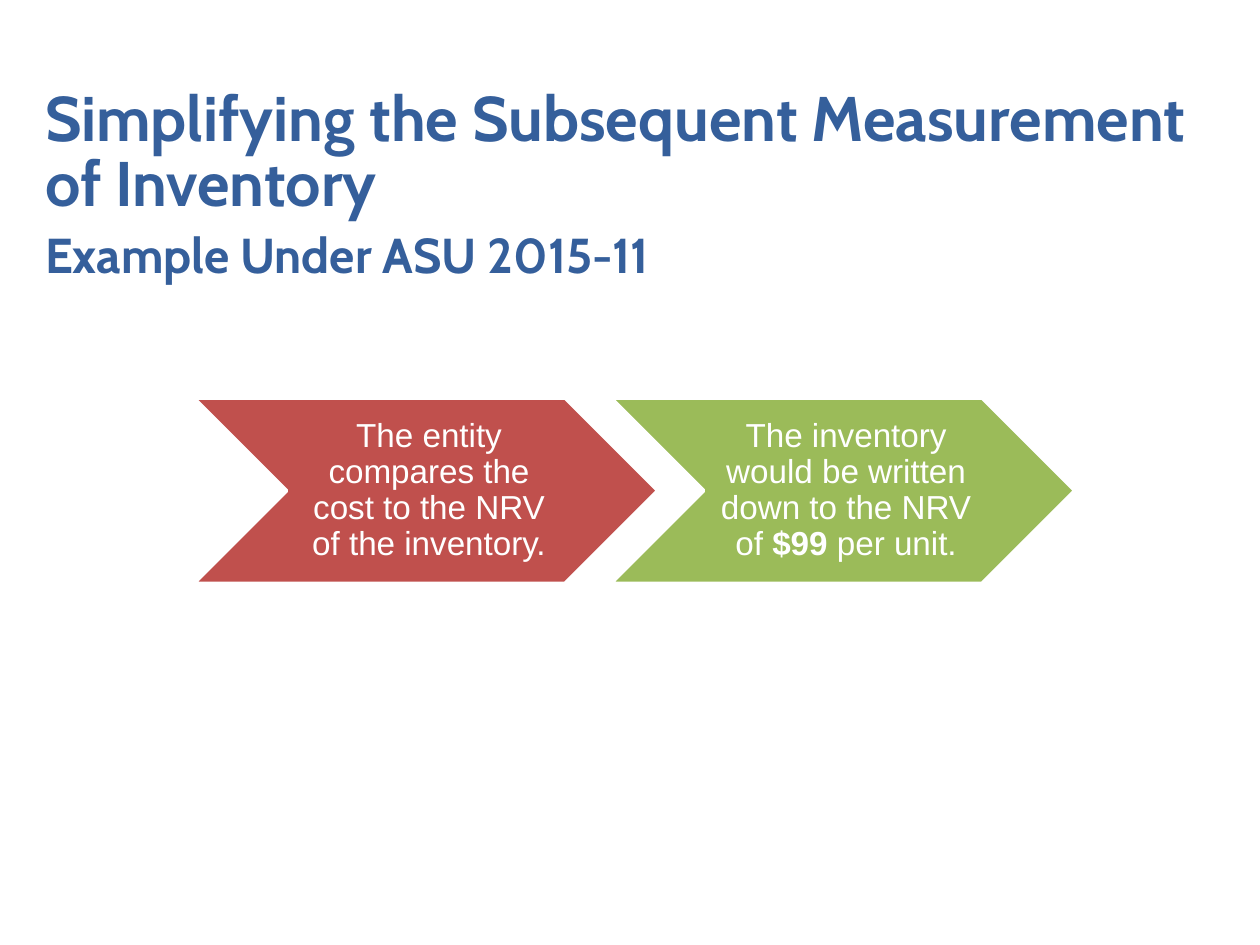
from dataclasses import dataclass

from pptx import Presentation
from pptx.dml.color import RGBColor
from pptx.enum.shapes import MSO_SHAPE
from pptx.enum.text import MSO_ANCHOR, PP_ALIGN
from pptx.util import Inches, Pt

COLORS = {"title": "355F9B", "red": "C0504D", "green": "9BBB59", "white": "FFFFFF"}


@dataclass
class Step:
    """A chevron step, its text held as (text, bold) pairs."""
    fill: str
    texts: list[tuple[str, bool]]


STEPS = [
    Step("red", [("The entity compares the cost to the NRV of the inventory.", False)]),
    Step("green", [("The inventory would be written down to the NRV of ", False),
                   ("$99 ", True), ("per unit.", False)]),
]


def add_text(p, text: str, *, size: float, font: str, color: str, bold: bool = False) -> None:
    """Append a formatted run to a paragraph."""
    r = p.add_run()
    r.text = text
    r.font.size = Pt(size)
    r.font.name = font
    r.font.bold = bold
    r.font.color.rgb = RGBColor.from_string(COLORS[color])


def add_title(s) -> None:
    """Draw the title with its smaller second line."""
    tf = s.shapes.add_textbox(Inches(0.26), Inches(0.99), Inches(9.74), Inches(0.98)).text_frame
    tf.word_wrap = True
    tf.vertical_anchor = MSO_ANCHOR.MIDDLE
    p = tf.paragraphs[0]
    p.line_spacing = Pt(37)
    add_text(p, "Simplifying the Subsequent Measurement of Inventory",
             size=36, font="Cabin", color="title", bold=True)
    p.add_line_break()
    add_text(p, "Example Under ASU 2015-11", size=28, font="Cabin", color="title", bold=True)


def add_step(s, step: Step, left: float) -> None:
    """Draw one chevron with its centred text."""
    sp = s.shapes.add_shape(MSO_SHAPE.CHEVRON, Inches(left), Inches(3.16), Inches(3.68), Inches(1.47))
    sp.shadow.inherit = False
    sp.fill.solid()
    sp.fill.fore_color.rgb = RGBColor.from_string(COLORS[step.fill])
    sp.line.color.rgb = RGBColor.from_string(COLORS["white"])
    sp.line.width = Pt(2)
    tf = sp.text_frame
    tf.word_wrap = True
    tf.vertical_anchor = MSO_ANCHOR.MIDDLE
    tf.margin_left = Inches(0.08)
    tf.margin_top = tf.margin_right = tf.margin_bottom = Inches(0.03)
    p = tf.paragraphs[0]
    p.alignment = PP_ALIGN.CENTER
    p.line_spacing = 0.9
    for text, bold in step.texts:
        add_text(p, text, size=19, font="Arial", color="white", bold=bold)


def main() -> None:
    """Build and save the slide."""
    prs = Presentation()
    prs.slide_width, prs.slide_height = Inches(10), Inches(7.5)
    s = prs.slides.add_slide(prs.slide_layouts[6])
    for i, step in enumerate(STEPS):
        add_step(s, step, 1.54 + 3.31 * i)
    add_title(s)
    prs.save("out.pptx")


if __name__ == "__main__":
    main()
